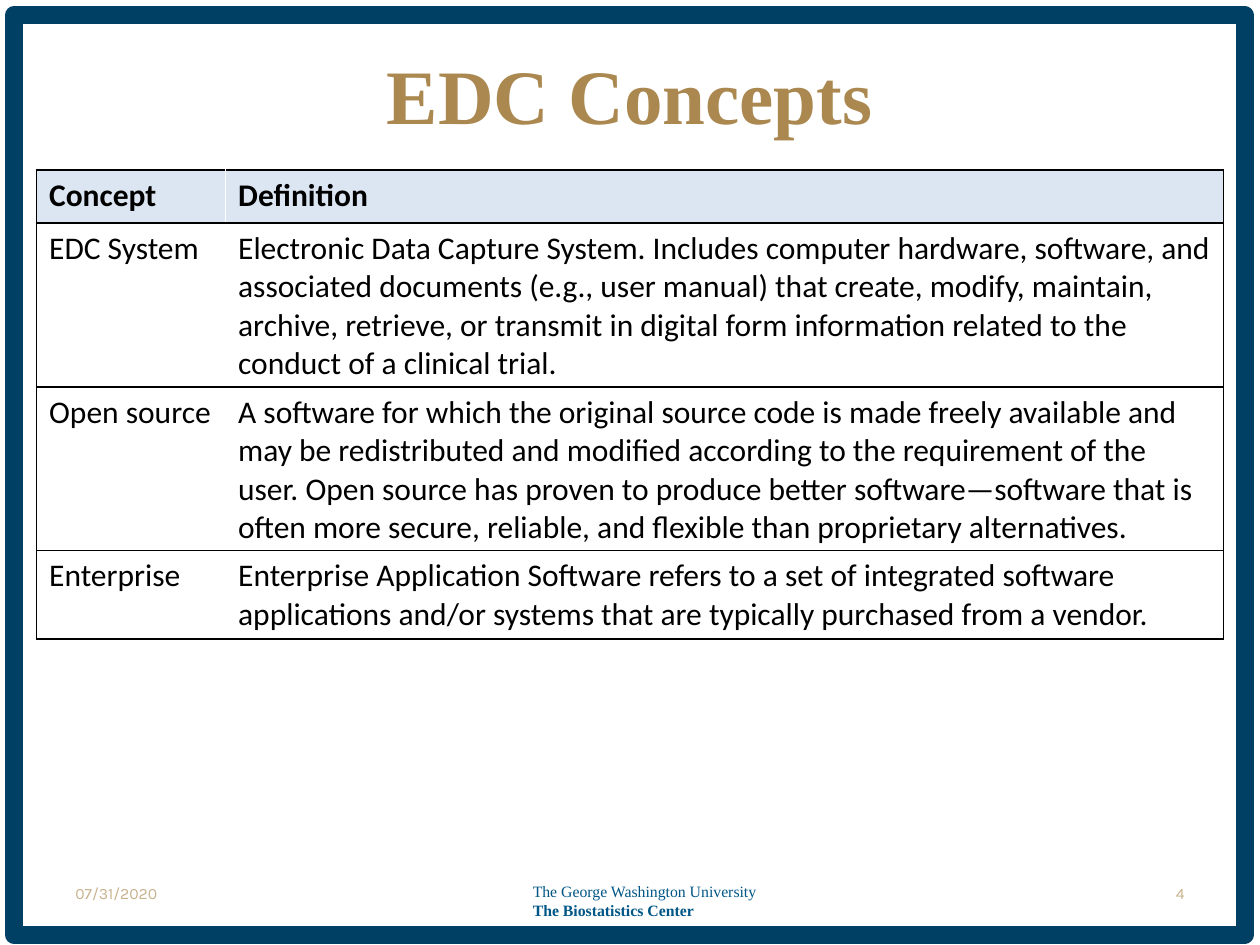
from lxml import etree
from pptx import Presentation
from pptx.dml.color import RGBColor
from pptx.enum.shapes import MSO_SHAPE as Shape
from pptx.enum.text import MSO_ANCHOR as Anchor, MSO_AUTO_SIZE as Fit, PP_ALIGN as Align
from pptx.oxml.ns import qn
from pptx.util import Inches, Pt

NAVY = RGBColor(0x00, 0x40, 0x65)
BLUE = RGBColor(0x00, 0x56, 0x86)
GOLD = RGBColor(0xAA, 0x88, 0x50)
SAND = RGBColor(0xC8, 0xB1, 0x8B)
PALE = RGBColor(0xDC, 0xE6, 0xF2)
BLACK = RGBColor(0, 0, 0)
WHITE = RGBColor(0xFF, 0xFF, 0xFF)

ROWS = [
    ("Concept", "Definition"),
    ("EDC System",
     "Electronic Data Capture System. Includes computer hardware, software, and "
     "associated documents (e.g., user manual) that create, modify, maintain, "
     "archive, retrieve, or transmit in digital form information related to the "
     "conduct of a clinical trial."),
    ("Open source",
     "A software for which the original source code is made freely available and "
     "may be redistributed and modified according to the requirement of the user. "
     "Open source has proven to produce better software—software that is often "
     "more secure, reliable, and flexible than proprietary alternatives."),
    ("Enterprise",
     "Enterprise Application Software refers to a set of integrated software "
     "applications and/or systems that are typically purchased from a vendor."),
]
WIDTHS = [1.5, 7.92]
HEIGHTS = [0.42, 0.56, 0.97, 0.52]


def add_text(place, text, face, size, color, bold=False, align=Align.LEFT):
    box = slide.shapes.add_textbox(*map(Inches, place))
    frame = box.text_frame
    frame.text = text
    frame.word_wrap = True
    frame.vertical_anchor = Anchor.MIDDLE
    for para in frame.paragraphs:
        para.alignment = align
        for run in para.runs:
            font = run.font
            font.name, font.size, font.bold = face, Pt(size), bold
            font.color.rgb = color
    return frame


def add_border(cell, side, color):
    props = cell._tc.get_or_add_tcPr()
    line = etree.SubElement(props, qn("a:ln" + side), w=str(Pt(1)))
    fill = etree.SubElement(line, qn("a:solidFill"))
    etree.SubElement(fill, qn("a:srgbClr"), val=str(color))


deck = Presentation()
deck.slide_width, deck.slide_height = Inches(10), Inches(7.5)
slide = deck.slides.add_slide(deck.slide_layouts[6])

frame = slide.shapes.add_shape(
    Shape.RECTANGLE, Inches(0.11), Inches(0.12), Inches(9.77), Inches(7.3))
frame.shadow.inherit = False
frame.fill.background()
frame.line.color.rgb = NAVY
frame.line.width = Pt(10)

center = add_text((4.13, 6.82, 2.01, 0.53),
                  "The George Washington University\nThe Biostatistics Center",
                  "Times New Roman", 9, BLUE)
center.word_wrap = False
center.auto_size = Fit.SHAPE_TO_FIT_TEXT
center.vertical_anchor = Anchor.TOP
center.paragraphs[0].line_spacing = Pt(20)
center.paragraphs[1].runs[0].font.bold = True

add_text((0.5, 0.33, 9, 0.83), "EDC Concepts", "Times New Roman", 44, GOLD,
         bold=True, align=Align.CENTER)
add_text((0.5, 6.89, 2.33, 0.4), "07/31/2020", "Karla", 9, SAND)
add_text((7.17, 6.89, 2.33, 0.4), "4", "Karla", 9, SAND, align=Align.RIGHT)

table = slide.shapes.add_table(
    len(ROWS), len(WIDTHS), Inches(0.29), Inches(1.35),
    Inches(sum(WIDTHS)), Inches(sum(HEIGHTS))).table
table.horz_banding = False
for col, width in zip(table.columns, WIDTHS):
    col.width = Inches(width)
for r, (texts, height) in enumerate(zip(ROWS, HEIGHTS)):
    table.rows[r].height = Inches(height)
    for c, text in enumerate(texts):
        cell = table.cell(r, c)
        cell.text = text
        font = cell.text_frame.paragraphs[0].runs[0].font
        font.name, font.size, font.bold = "Calibri", Pt(18), r == 0
        font.color.rgb = BLACK
        # The divider between the two columns is white, all else is black.
        inner = "R" if c == 0 else "L"
        for side in "LRTB":
            add_border(cell, side, WHITE if side == inner else BLACK)
        if r == 0:
            cell.fill.solid()
            cell.fill.fore_color.rgb = PALE
        else:
            cell.fill.background()

deck.save("out.pptx")
